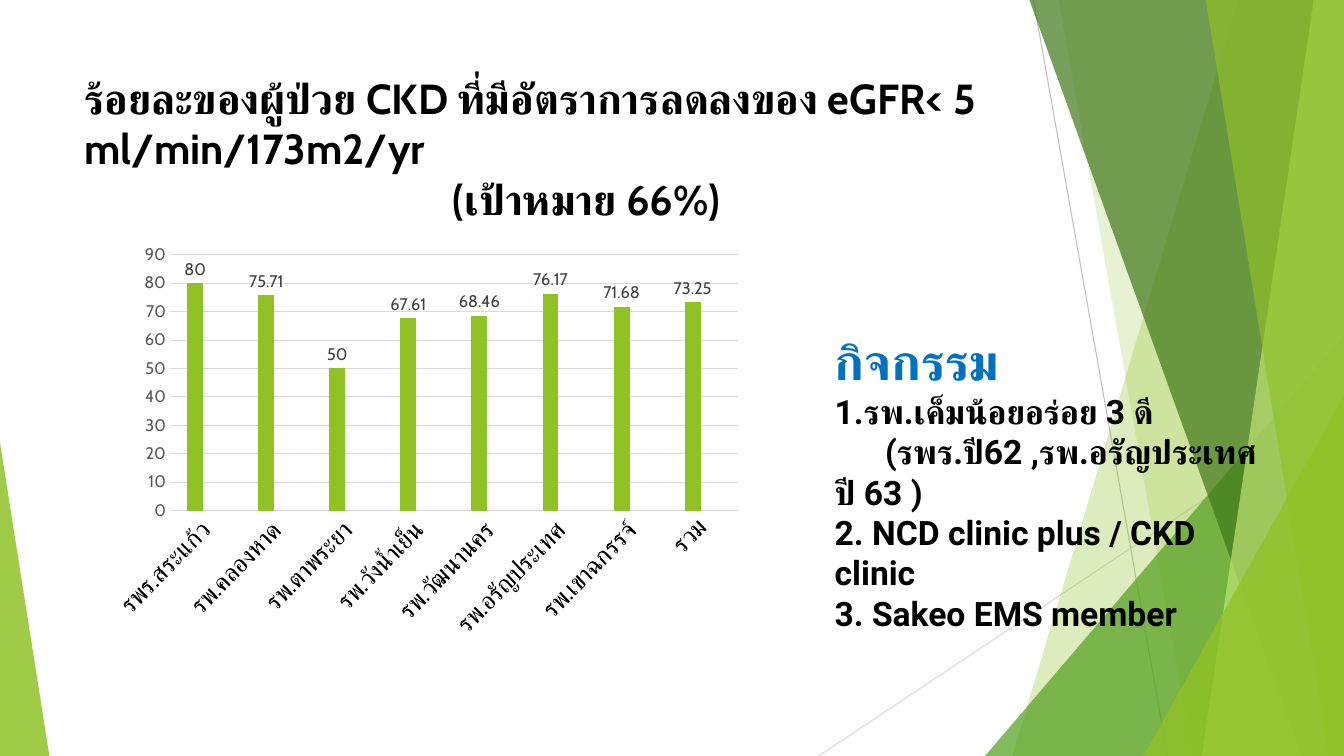
from lxml import etree
from pptx import Presentation
from pptx.chart.data import CategoryChartData
from pptx.dml.color import RGBColor
from pptx.enum.chart import XL_CHART_TYPE, XL_LABEL_POSITION, XL_TICK_MARK
from pptx.enum.shapes import MSO_CONNECTOR, MSO_SHAPE
from pptx.enum.text import MSO_ANCHOR
from pptx.oxml import parse_xml
from pptx.oxml.ns import nsdecls, qn
from pptx.util import Inches, Pt

COLUMNS = XL_CHART_TYPE.COLUMN_CLUSTERED
OUTSIDE_END = XL_LABEL_POSITION.OUTSIDE_END
NO_TICK = XL_TICK_MARK.NONE
STRAIGHT = MSO_CONNECTOR.STRAIGHT
TRIANGLE = MSO_SHAPE.ISOSCELES_TRIANGLE
TOP = MSO_ANCHOR.TOP

WIDTH, HEIGHT = 13.33, 7.5
TITLE_FONT, BODY_FONT = "Cabin", "Roboto"
COLORS = {
    "lime": "90C226", "green": "54A021", "forest": "3F7819", "pale": "C0E474",
    "line": "BFBFBF", "grid": "D9D9D9", "axis": "595959", "label": "404040",
    "black": "000000", "blue": "0070C0",
}
RATES = {
    "รพร.สระแก้ว": 80, "รพ.คลองหาด": 75.71, "รพ.ตาพระยา": 50,
    "รพ.วังน้ำเย็น": 67.61, "รพ.วัฒนานคร": 68.46, "รพ.อรัญประเทศ": 76.17,
    "รพ.เขาฉกรรจ์": 71.68, "รวม": 73.25,
}
ACTIVITIES = [
    ("1.รพ.เค็มน้อยอร่อย 3 ดี", 0),
    ("(รพร.ปี62 ,รพ.อรัญประเทศ ปี 63 )", 0.5),
    ("2. NCD clinic plus / CKD clinic", 0),
    ("3. Sakeo EMS member", 0),
]


def rgb(name):
    return RGBColor.from_string(COLORS[name])


def set_font(font, name, size, color, bold=False):
    font.name, font.size, font.bold = name, Pt(size), bold
    font.color.rgb = rgb(color)


def paint(shape, color, opacity):
    """Give a shape a see-through fill, no outline and no shadow."""
    shape.shadow.inherit = False
    shape.line.fill.background()
    shape.fill.solid()
    shape.fill.fore_color.rgb = rgb(color)
    fill_color = shape.fill._xPr.find(qn("a:solidFill"))[0]
    etree.SubElement(fill_color, qn("a:alpha")).set("val", str(opacity * 1000))


def add_thin_line(slide, start, end, color):
    line = slide.shapes.add_connector(STRAIGHT, *map(Inches, start + end))
    line.line.color.rgb = rgb(color)
    line.line.width = Pt(0.75)
    etree.SubElement(line._element.spPr, qn("a:effectLst"))


def add_band(slide, top_x, bottom_x, right, height, color, opacity):
    """Add a full-height facet from a slanted left edge to the right edge."""
    builder = slide.shapes.build_freeform(Inches(top_x), 0)
    corners = [(right, 0), (right, height), (bottom_x, height)]
    builder.add_line_segments([(Inches(x), Inches(y)) for x, y in corners])
    paint(builder.convert_to_shape(), color, opacity)


def add_corner(slide, left, top, right, bottom, peak, color, opacity):
    """Add a right triangle whose peak is at 0 (left) or 1 (right)."""
    shape = slide.shapes.add_shape(
        TRIANGLE, *map(Inches, (left, top, right - left, bottom - top)))
    shape.adjustments[0] = peak
    paint(shape, color, opacity)


def add_facets(slide, width, height):
    add_thin_line(slide, (10.25, 0), (11.58, height), "line")
    add_thin_line(slide, (width, 4.03), (8.12, height), "grid")
    add_band(slide, 12.28, 10.04, width, height, "lime", 30)
    add_band(slide, 10.5, 11.83, width, height, "lime", 20)
    add_corner(slide, 9.77, 3.33, width, height, 1, "green", 72)
    add_band(slide, 10.21, 12.91, width, height, "forest", 70)
    add_band(slide, 13.03, 11.92, width, height, "pale", 70)
    add_band(slide, 11.96, 13.18, width, height, "lime", 65)
    add_corner(slide, 11.34, 3.93, width, height, 1, "lime", 80)
    add_corner(slide, 0, 4.39, 0.49, height, 0, "lime", 85)


def add_text_frame(slide, box):
    frame = slide.shapes.add_textbox(*map(Inches, box)).text_frame
    frame.word_wrap = True
    frame.vertical_anchor = TOP
    return frame


def add_line(paragraph, text, font, size, color, indent=0):
    """Write one bold run, with the same typeface for Latin and Thai."""
    run = paragraph.add_run()
    run.text = text
    set_font(run.font, font, size, color, bold=True)
    etree.SubElement(run._r.get_or_add_rPr(), qn("a:cs")).set("typeface", font)
    if indent:
        paragraph._p.get_or_add_pPr().set("indent", str(Inches(indent)))


def add_title(slide, box):
    frame = add_text_frame(slide, box)
    add_line(frame.paragraphs[0],
             "ร้อยละของผู้ป่วย CKD ที่มีอัตราการลดลงของ eGFR< 5 ml/min/173m2/yr",
             TITLE_FONT, 30, "black")
    add_line(frame.add_paragraph(), "(เป้าหมาย 66%)",
             TITLE_FONT, 30, "black", indent=3.65)


def add_activities(slide, box):
    frame = add_text_frame(slide, box)
    add_line(frame.paragraphs[0], "กิจกรรม", BODY_FONT, 36, "blue")
    for text, indent in ACTIVITIES:
        add_line(frame.add_paragraph(), text, BODY_FONT, 24, "black", indent)


def place_plot(chart, x, y, w, h):
    """Fix the inner plot area, in fractions of the chart."""
    plot_area = chart._chartSpace.chart.plotArea
    for layout in plot_area.findall(qn("c:layout")):
        plot_area.remove(layout)
    sizes = "".join(f'<c:{tag} val="{value}"/>'
                    for tag, value in zip("xywh", (x, y, w, h)))
    plot_area.insert(0, parse_xml(
        f'<c:layout {nsdecls("c")}><c:manualLayout>'
        '<c:layoutTarget val="inner"/><c:xMode val="edge"/><c:yMode val="edge"/>'
        f'{sizes}</c:manualLayout></c:layout>'))


def style_axes(chart):
    category, value = chart.category_axis, chart.value_axis
    for axis, size, color in ((category, 18, "black"), (value, 12, "axis")):
        axis.major_tick_mark = axis.minor_tick_mark = NO_TICK
        set_font(axis.tick_labels.font, TITLE_FONT, size, color)
    body = category._element.find(qn("c:txPr")).find(qn("a:bodyPr"))
    body.set("rot", "-2700000")
    value.minimum_scale, value.maximum_scale, value.major_unit = 0, 90, 10
    value.format.line.fill.background()
    for line in (category.format.line, value.major_gridlines.format.line):
        line.color.rgb = rgb("grid")
        line.width = Pt(0.75)


def add_rate_chart(slide, box):
    data = CategoryChartData()
    data.categories = list(RATES)
    data.add_series("Series 1", list(RATES.values()))
    data.add_series("Series 2", [None] * len(RATES))
    chart = slide.shapes.add_chart(COLUMNS, *map(Inches, box), data).chart
    chart.has_legend = chart.has_title = False
    set_font(chart.font, TITLE_FONT, 10, "black")
    style_axes(chart)
    plot = chart.plots[0]
    plot.gap_width, plot.overlap, plot.vary_by_categories = 219, -27, False
    for series, color in zip(plot.series, ("lime", "green")):
        series.format.fill.solid()
        series.format.fill.fore_color.rgb = rgb(color)
    labels = plot.series[0].data_labels
    labels.show_value = True
    labels.position = OUTSIDE_END
    set_font(labels.font, TITLE_FONT, 12, "label")
    place_plot(chart, 0.06, 0.05, 0.89, 0.61)


def main():
    presentation = Presentation()
    presentation.slide_width = Inches(WIDTH)
    presentation.slide_height = Inches(HEIGHT)
    slide = presentation.slides.add_slide(presentation.slide_layouts[6])
    add_facets(slide, WIDTH, HEIGHT)
    add_title(slide, (0.74, 0.67, 12.22, 1.16))
    add_rate_chart(slide, (1.13, 2.32, 6.51, 4.16))
    add_activities(slide, (8.18, 3.23, 4.39, 2.32))
    presentation.save("out.pptx")


if __name__ == "__main__":
    main()
